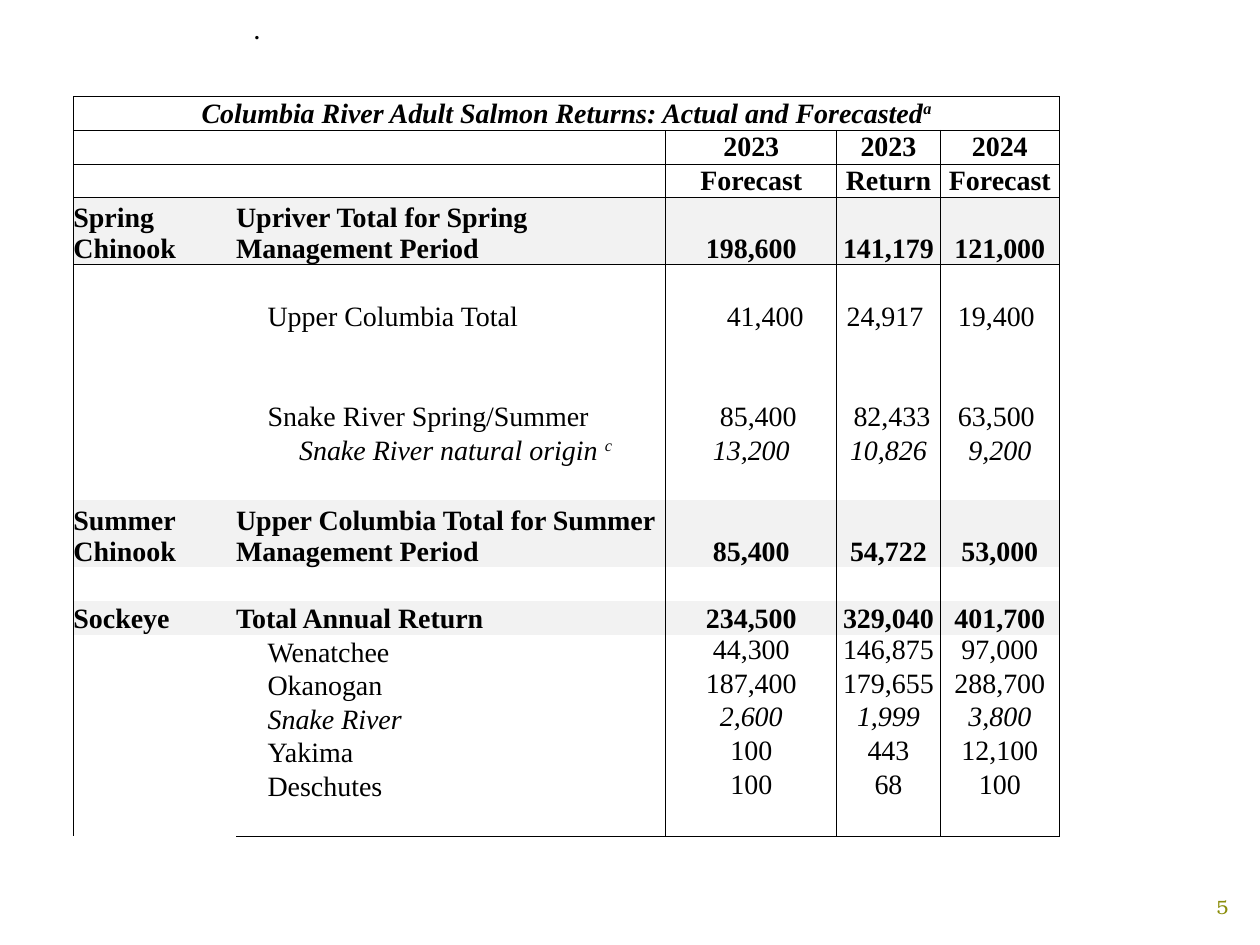
from dataclasses import dataclass

from lxml import etree
from pptx import Presentation
from pptx.dml.color import RGBColor
from pptx.enum.text import MSO_ANCHOR, PP_ALIGN
from pptx.oxml.ns import qn
from pptx.util import Cm, Pt

LEFT, CENTER = PP_ALIGN.LEFT, PP_ALIGN.CENTER
TOP, MIDDLE, BOTTOM = MSO_ANCHOR.TOP, MSO_ANCHOR.MIDDLE, MSO_ANCHOR.BOTTOM
PLAIN_TABLE_STYLE = "{2D5ABB26-0587-4C30-8999-92F81FD0307C}"


@dataclass(frozen=True)
class Theme:
    """Colours, fonts and sizes of the slide."""
    ink: str = "000000"
    band: str = "F2F2F2"
    accent: str = "8A8D09"
    table_font: str = "Times New Roman"
    number_font: str = "TeX Gyre Bonum"
    table_size: int = 16
    mark_size: int = 12
    number_size: int = 11
    rule: float = 0.5


THEME = Theme()
COLUMN_WIDTHS = (3.28, 8.66, 3.45, 2.08, 2.41)
INDENT = 0.635
SPACE = 0.14
CAPTION = "Columbia River Adult Salmon Returns: Actual and Forecasted"
HEADINGS = (("2023", "2023", "2024"), ("Forecast", "Return", "Forecast"))

BLANK = {}
RETURNS = [
    {"species": "Spring Chinook", "label": "Upriver Total for Spring Management Period",
     "values": ("198,600", "141,179", "121,000"), "lines": 2},
    BLANK,
    {"label": "Upper Columbia Total", "values": ("41,400", "24,917", "19,400"),
     "shifts": (4, -1, -1)},
    BLANK,
    {"label": "Snake River Spring/Summer", "values": ("85,400", "82,433", "63,500"),
     "shifts": (2, 1, -1), "lines": 2},
    {"label": "Snake River natural origin ", "note": "c", "level": 2, "italic": True,
     "values": ("13,200", "10,826", "9,200")},
    BLANK,
    {"species": "Summer Chinook", "label": "Upper Columbia Total for Summer Management Period",
     "values": ("85,400", "54,722", "53,000"), "lines": 2},
    BLANK,
    {"species": "Sockeye", "label": "Total Annual Return",
     "values": ("234,500", "329,040", "401,700")},
    {"label": "Wenatchee", "values": ("44,300", "146,875", "97,000"), "anchor": TOP},
    {"label": "Okanogan", "values": ("187,400", "179,655", "288,700"), "anchor": TOP},
    {"label": "Snake River", "values": ("2,600", "1,999", "3,800"), "anchor": TOP,
     "italic": True},
    {"label": "Yakima", "values": ("100", "443", "12,100"), "anchor": TOP},
    {"label": "Deschutes", "values": ("100", "68", "100"), "anchor": TOP},
    BLANK,
]


def add_run(paragraph, text, color=THEME.ink, raised=False, **style):
    """Append a run with the given font attributes."""
    run = paragraph.add_run()
    run.text = text
    for attribute, value in style.items():
        setattr(run.font, attribute, value)
    run.font.color.rgb = RGBColor.from_string(color)
    if raised:
        run.font._element.set("baseline", "30000")


def add_label(slide, box, text, align, **style):
    """Place one line of text, vertically centred in its box."""
    frame = slide.shapes.add_textbox(*map(Cm, box)).text_frame
    frame.word_wrap = True
    frame.vertical_anchor = MIDDLE
    frame.paragraphs[0].alignment = align
    add_run(frame.paragraphs[0], text, **style)


def write_cell(cell, text, note="", align=CENTER, anchor=BOTTOM, inset=0, **style):
    """Write a cell; a positive inset pushes from the left, a negative from the right."""
    cell.vertical_anchor = anchor
    cell.margin_left = Cm(max(inset, 0))
    cell.margin_right = Cm(max(-inset, 0))
    paragraph = cell.text_frame.paragraphs[0]
    paragraph.alignment = align
    font = {"name": THEME.table_font, "size": Pt(THEME.table_size), **style}
    add_run(paragraph, text, **font)
    if note:
        add_run(paragraph, note, raised=True, **font)


def prepare_cell(cell):
    """Clear the margins and keep an empty cell at the table's type size."""
    for side in ("left", "right", "top", "bottom"):
        setattr(cell, f"margin_{side}", 0)
    paragraph = cell.text_frame.paragraphs[0]._p
    etree.SubElement(paragraph, qn("a:endParaRPr"), sz=str(THEME.table_size * 100))


def rule_cell(cell, sides):
    """Draw thin rules on the given sides, from L, R, T and B."""
    properties = cell._tc.get_or_add_tcPr()
    for side in sides:
        line = etree.SubElement(properties, qn(f"a:ln{side}"), w=str(Pt(THEME.rule)))
        fill = etree.SubElement(line, qn("a:solidFill"))
        etree.SubElement(fill, qn("a:srgbClr"), val=THEME.ink)


def cell_sides(row, column, last_row):
    """Return the ruled sides of a cell."""
    if row == 0:
        return "LRTB"
    sides = "LR" if column > 1 else "LR"[column]
    if row in (1, 3):
        sides += "T"
    if row == 2 or (row == last_row and column > 0):
        sides += "B"
    return sides


def fill_return_row(cells, entry):
    """Write one stock's label and its three counts."""
    is_total = "species" in entry
    style = {"bold": is_total, "italic": entry.get("italic", False)}
    if is_total:
        write_cell(cells[0], entry["species"], align=LEFT, **style)
        for cell in cells:
            cell.fill.solid()
            cell.fill.fore_color.rgb = RGBColor.from_string(THEME.band)
    level = 0 if is_total else entry.get("level", 1)
    write_cell(cells[1], entry["label"], entry.get("note", ""), LEFT,
               inset=level * INDENT, **style)
    shifts = entry.get("shifts", (0, 0, 0))
    for cell, value, shift in zip(cells[2:], entry["values"], shifts):
        write_cell(cell, value, anchor=entry.get("anchor", BOTTOM),
                   inset=shift * SPACE, **style)


def add_returns_table(slide, box):
    """Build the table of salmon returns in its box."""
    row_lines = [1, 1, 1] + [entry.get("lines", 1) for entry in RETURNS]
    frame = slide.shapes.add_table(len(row_lines), len(COLUMN_WIDTHS), *map(Cm, box))
    table = frame.table
    table.first_row = table.horz_banding = False
    next(frame._element.iter(qn("a:tableStyleId"))).text = PLAIN_TABLE_STYLE
    for column, width in zip(table.columns, COLUMN_WIDTHS):
        column.width = Cm(width)
    for row, lines in zip(table.rows, row_lines):
        row.height = Cm(box[3] * lines / sum(row_lines))

    grid = [list(row.cells) for row in table.rows]
    for r, cells in enumerate(grid):
        for c, cell in enumerate(cells):
            prepare_cell(cell)
            rule_cell(cell, cell_sides(r, c, len(grid) - 1))
    grid[0][0].merge(grid[0][-1])
    write_cell(grid[0][0], CAPTION, "a", anchor=MIDDLE, bold=True, italic=True)
    for cells, headings in zip(grid[1:3], HEADINGS):
        for cell, heading in zip(cells[2:], headings):
            write_cell(cell, heading, anchor=MIDDLE, bold=True)
    for cells, entry in zip(grid[3:], RETURNS):
        if entry:
            fill_return_row(cells, entry)


def main():
    """Build and save the slide."""
    deck = Presentation()
    deck.slide_width, deck.slide_height = Cm(25.4), Cm(19.05)
    slide = deck.slides.add_slide(deck.slide_layouts[6])
    add_label(slide, (23.88, 17.78, 1.52, 1.02), "5", CENTER, color=THEME.accent,
              name=THEME.number_font, size=Pt(THEME.number_size))
    add_label(slide, (4.88, 0.25, 25.07, 0.76), ".", LEFT, bold=True,
              name=THEME.table_font, size=Pt(THEME.mark_size))
    add_returns_table(slide, (1.48, 1.95, sum(COLUMN_WIDTHS), 14.88))
    deck.save("out.pptx")


if __name__ == "__main__":
    main()
